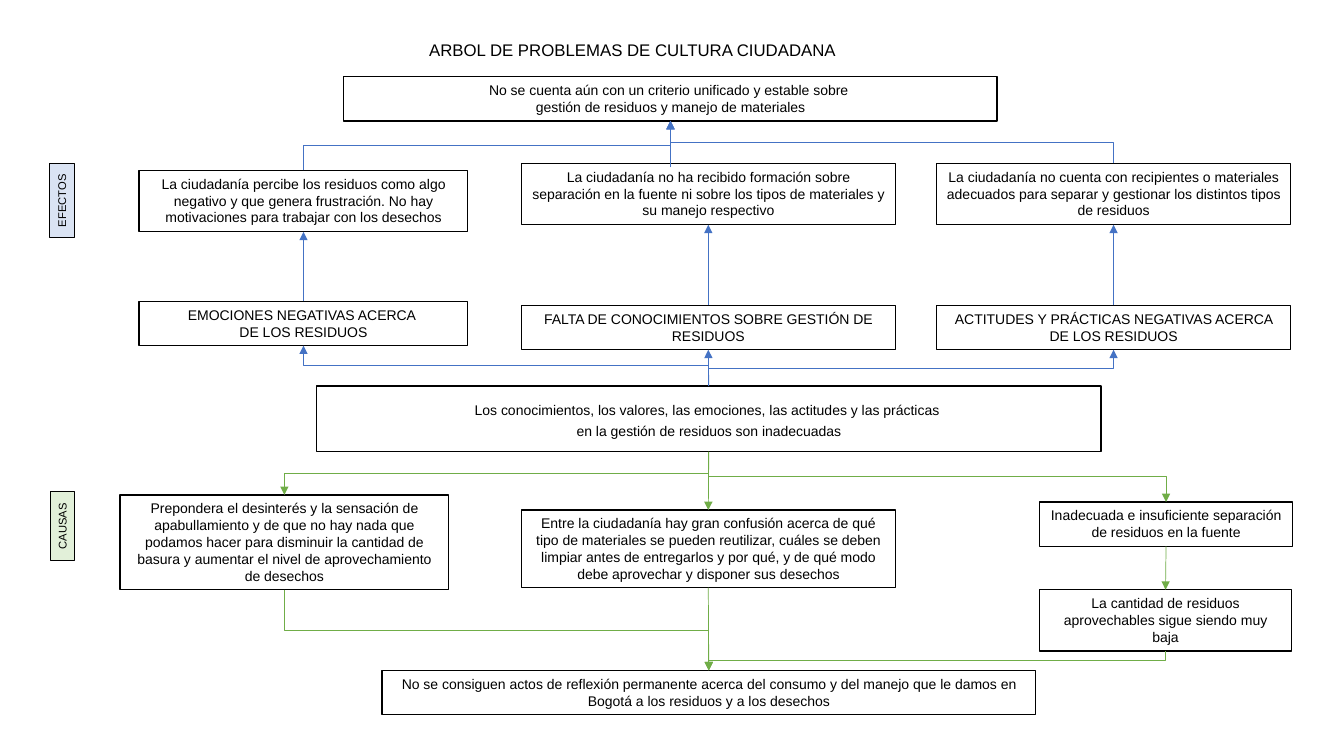
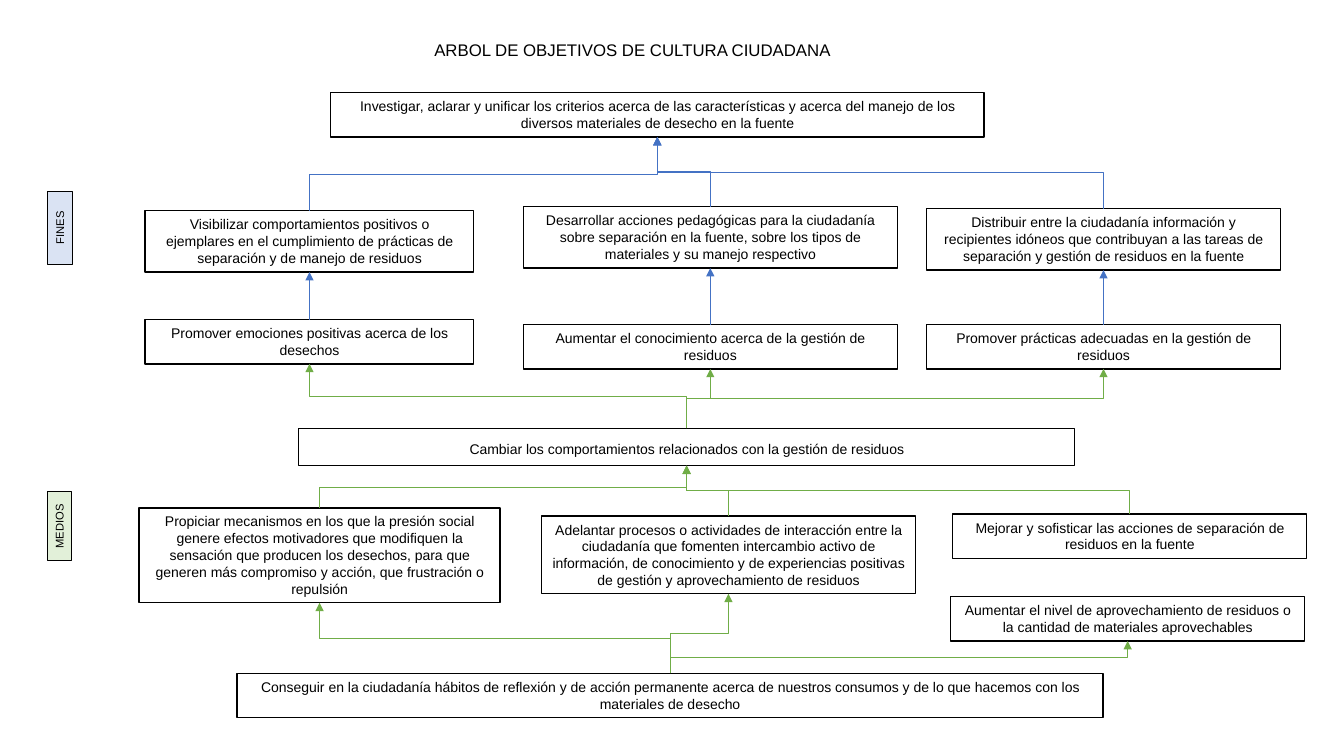
from itertools import product

from lxml import etree
from pptx import Presentation
from pptx.dml.color import RGBColor
from pptx.enum.dml import MSO_LINE
from pptx.enum.shapes import MSO_CONNECTOR
from pptx.enum.text import MSO_ANCHOR, MSO_AUTO_SIZE, PP_ALIGN
from pptx.oxml.ns import qn
from pptx.util import Inches, Pt

COLORS = {
    "text": "000000", "paper": "FFFFFF", "border": "000000",
    "blue": "4472C4", "green": "70AD47",
    "pale_blue": "DAE3F3", "pale_green": "E2F0D9",
}
FONT = "Arial"
HEADING_AT = (1.59, 0.35, 9.37, 0.3)
LABEL_H = 0.24
BOX_H = {1: 0.44, 2: 0.61, 3: 0.77, 4: 0.94}
TOP, BOTTOM = 0, 2

TREES = [
    {
        "heading": "ARBOL DE PROBLEMAS DE CULTURA CIUDADANA",
        "core": ((3.14, 3.83, 7.78, 0.65),
                 "Los conocimientos, los valores, las emociones, las actitudes y las prácticas \n"
                 "en la gestión de residuos son inadecuadas"),
        "boxes": {
            "knowledge": ((5.17, 3.03, 3.71, BOX_H[1]),
                          "FALTA DE CONOCIMIENTOS SOBRE GESTIÓN DE RESIDUOS"),
            "practices": ((9.29, 3.03, 3.51, BOX_H[1]),
                          "ACTITUDES Y PRÁCTICAS NEGATIVAS ACERCA DE LOS RESIDUOS"),
            "emotions": ((1.38, 2.99, 3.26, BOX_H[1]),
                         "EMOCIONES NEGATIVAS ACERCA \nDE LOS RESIDUOS"),
            "training": ((5.17, 1.62, 3.71, BOX_H[2]),
                         "La ciudadanía no ha recibido formación sobre separación en la fuente "
                         "ni sobre los tipos de materiales y su manejo respectivo"),
            "criteria": ((3.41, 0.76, 6.48, BOX_H[1]),
                         "No se cuenta aún con un criterio unificado y estable sobre \n"
                         "gestión de residuos y manejo de materiales"),
            "containers": ((9.29, 1.62, 3.51, BOX_H[2]),
                           "La ciudadanía no cuenta con recipientes o materiales adecuados "
                           "para separar y gestionar los distintos tipos de residuos"),
            "perception": ((1.38, 1.69, 3.26, BOX_H[2]),
                           "La ciudadanía percibe los residuos como algo negativo y que genera "
                           "frustración. No hay motivaciones para trabajar con los desechos"),
            "confusion": ((5.17, 5.06, 3.71, BOX_H[3]),
                          "Entre la ciudadanía hay gran confusión acerca de qué tipo de materiales "
                          "se pueden reutilizar, cuáles se deben limpiar antes de entregarlos y por "
                          "qué, y de qué modo debe aprovechar y disponer sus desechos"),
            "separation": ((10.31, 4.98, 2.51, BOX_H[1]),
                           "Inadecuada e insuficiente separación de residuos en la fuente"),
            "apathy": ((1.19, 4.91, 3.26, BOX_H[4]),
                       "Prepondera el desinterés y la sensación de apabullamiento y de que no hay "
                       "nada que podamos hacer para disminuir la cantidad de basura y aumentar el "
                       "nivel de aprovechamiento de desechos"),
            "reflection": ((3.79, 6.65, 6.48, BOX_H[1]),
                           "No se consiguen actos de reflexión permanente acerca del consumo y del "
                           "manejo que le damos en Bogotá a los residuos y a los desechos"),
            "recovery": ((10.31, 5.85, 2.5, BOX_H[2]),
                         "La cantidad de residuos aprovechables sigue siendo muy baja"),
        },
        "links": [
            ("blue", ["knowledge"], ["training"]),
            ("blue", ["core"], ["emotions", "practices", "knowledge"]),
            ("blue", ["emotions"], ["perception"]),
            ("blue", ["practices"], ["containers"]),
            ("blue", ["perception", "containers"], ["criteria"]),
            ("green", ["core"], ["apathy", "separation", "confusion"]),
            ("green", ["separation"], ["recovery"]),
            ("green", ["apathy", "recovery", "confusion"], ["reflection"]),
        ],
        "stems": [("blue", 1.66, "criteria")],
        "labels": [("CAUSAS", "pale_green", 0.28, 5.1, 0.68),
                   ("EFECTOS", "pale_blue", 0.25, 1.87, 0.73)],
    },
    {
        "heading": "ARBOL DE OBJETIVOS DE CULTURA CIUDADANA",
        "core": ((2.96, 4.25, 7.7, 0.37),
                 "Cambiar los comportamientos relacionados con la gestión de residuos"),
        "boxes": {
            "knowledge": ((5.19, 3.22, 3.71, BOX_H[1]),
                          "Aumentar el conocimiento acerca de la gestión de residuos"),
            "practices": ((9.19, 3.22, 3.51, BOX_H[1]),
                          "Promover prácticas adecuadas en la gestión de residuos"),
            "emotions": ((1.44, 3.17, 3.26, BOX_H[1]),
                         "Promover emociones positivas acerca de los desechos"),
            "training": ((5.19, 2.05, 3.71, BOX_H[2]),
                         "Desarrollar acciones pedagógicas para la ciudadanía sobre separación en "
                         "la fuente, sobre los tipos de materiales y su manejo respectivo"),
            "criteria": ((3.28, 0.92, 6.48, BOX_H[1]),
                         "Investigar, aclarar y unificar los criterios acerca de las características "
                         "y acerca del manejo de los diversos materiales de desecho en la fuente"),
            "containers": ((9.19, 2.07, 3.51, BOX_H[2]),
                           "Distribuir entre la ciudadanía información y recipientes idóneos que "
                           "contribuyan a las tareas de separación y gestión de residuos en la fuente"),
            "behaviour": ((1.44, 2.09, 3.26, BOX_H[2]),
                          "Visibilizar comportamientos positivos o ejemplares en el cumplimiento de "
                          "prácticas de separación y de manejo de residuos"),
            "exchange": ((5.37, 5.12, 3.71, BOX_H[3]),
                         "Adelantar procesos o actividades de interacción entre la ciudadanía que "
                         "fomenten intercambio activo de información, de conocimiento y de "
                         "experiencias positivas de gestión y aprovechamiento de residuos"),
            "separation": ((9.45, 5.1, 3.51, BOX_H[1]),
                           "Mejorar y sofisticar las acciones de separación de residuos en la fuente"),
            "motivation": ((1.38, 5.04, 3.58, BOX_H[4]),
                           "Propiciar mecanismos en los que la presión social genere efectos "
                           "motivadores que modifiquen la sensación que producen los desechos, para "
                           "que generen más compromiso y acción, que frustración o repulsión"),
            "habits": ((2.35, 6.68, 8.59, BOX_H[1]),
                       "Conseguir en la ciudadanía hábitos de reflexión y de acción permanente "
                       "acerca de nuestros consumos y de lo que hacemos con los materiales de desecho"),
            "recovery": ((9.43, 5.92, 3.51, BOX_H[1]),
                         "Aumentar el nivel de aprovechamiento de residuos o la cantidad de "
                         "materiales aprovechables"),
        },
        "links": [
            ("blue", ["training", "behaviour", "containers"], ["criteria"]),
            ("blue", ["emotions"], ["behaviour"]),
            ("blue", ["knowledge"], ["training"]),
            ("blue", ["practices"], ["containers"]),
            ("green", ["core"], ["emotions", "practices", "knowledge"]),
            ("green", ["exchange", "motivation", "separation"], ["core"]),
            ("green", ["habits"], ["motivation", "exchange", "recovery"]),
        ],
        "stems": [],
        "labels": [("MEDIOS", "pale_green", 0.25, 5.1, 0.68),
                   ("FINES", "pale_blue", 0.23, 2.14, 0.73)],
    },
]


def rgb(name):
    return RGBColor.from_string(COLORS[name])


def place(shape, at):
    for name, value in zip(("left", "top", "width", "height"), at):
        setattr(shape, name, Inches(value))


def write(shape, text, size, spacing=1.0, anchor=MSO_ANCHOR.TOP,
          auto_size=MSO_AUTO_SIZE.SHAPE_TO_FIT_TEXT):
    tf = shape.text_frame
    frame = {"word_wrap": True, "auto_size": auto_size, "vertical_anchor": anchor,
             "margin_left": Inches(0.1), "margin_right": Inches(0.1),
             "margin_top": Inches(0.05), "margin_bottom": Inches(0.05)}
    for name, value in frame.items():
        setattr(tf, name, value)
    p = tf.paragraphs[0]
    p.alignment, p.line_spacing, p.space_before = PP_ALIGN.CENTER, spacing, Pt(0)
    for i, line in enumerate(text.split("\n")):
        if i:
            p.add_line_break()
        r = p.add_run()
        r.text = line
        r.font.name, r.font.size = FONT, Pt(size)
        r.font.color.rgb = rgb("text")


def frame_box(shape, fill="paper", width=1):
    shape.fill.solid()
    shape.fill.fore_color.rgb = rgb(fill)
    shape.line.color.rgb = rgb("border")
    shape.line.width = Pt(width)


def add_text(s, at, text, size):
    sp = s.shapes.add_textbox(*map(Inches, at))
    write(sp, text, size)
    return sp


def add_arrow(s, kind, color, x1, y1, x2, y2):
    c = s.shapes.add_connector(kind, x1, y1, x2, y2)
    c.line.color.rgb = rgb(color)
    c.line.width = Pt(0.5)
    c.line.dash_style = MSO_LINE.SOLID
    etree.SubElement(c.line._get_or_add_ln(), qn("a:tailEnd"), type="triangle")
    etree.SubElement(c._element.spPr, qn("a:effectLst"))
    return c


def turn_elbow(c, x1, y1, x2, y2):
    w, h = abs(y2 - y1), abs(x2 - x1)
    c.left, c.top = (x1 + x2 - w) // 2, (y1 + y2 - h) // 2
    c.width, c.height = w, h
    down, right = y2 > y1, x2 > x1
    xfrm = c._element.spPr.find(qn("a:xfrm"))
    xfrm.flipH, xfrm.flipV = False, down == right
    xfrm.rot = 90 if down else 270


def side_middle(shape, side):
    return shape.left + shape.width // 2, shape.top + (shape.height if side == BOTTOM else 0)


def link(s, color, a, b):
    begin, end = (BOTTOM, TOP) if b.top > a.top else (TOP, BOTTOM)
    ends = *side_middle(a, begin), *side_middle(b, end)
    straight = abs(ends[2] - ends[0]) < Inches(0.05)
    kind = MSO_CONNECTOR.STRAIGHT if straight else MSO_CONNECTOR.ELBOW
    c = add_arrow(s, kind, color, *ends)
    c.begin_connect(a, begin)
    c.end_connect(b, end)
    if not straight:
        turn_elbow(c, *ends)


def build(prs, tree):
    s = prs.slides.add_slide(prs.slide_layouts[5])
    at, text = tree["core"]
    core = s.shapes.title
    place(core, at)
    write(core, text, 10, 1.2, MSO_ANCHOR.MIDDLE, MSO_AUTO_SIZE.NONE)
    frame_box(core)
    nodes = {"core": core}
    for name, (at, text) in tree["boxes"].items():
        nodes[name] = add_text(s, at, text, 10)
        frame_box(nodes[name])
    add_text(s, HEADING_AT, tree["heading"], 12)
    for color, sources, targets in tree["links"]:
        for a, b in product(sources, targets):
            link(s, color, nodes[a], nodes[b])
    for color, y, name in tree["stems"]:
        x, end_y = side_middle(nodes[name], BOTTOM)
        c = add_arrow(s, MSO_CONNECTOR.STRAIGHT, color, x, Inches(y), x, end_y)
        c.end_connect(nodes[name], BOTTOM)
    for text, fill, x, y, width in tree["labels"]:
        label = add_text(s, (x, y, width, LABEL_H), text, 8)
        label.rotation = 270
        frame_box(label, fill, 0.75)


def main():
    prs = Presentation()
    prs.slide_width, prs.slide_height = Inches(13.33), Inches(7.5)
    for tree in TREES:
        build(prs, tree)
    prs.save("out.pptx")


if __name__ == "__main__":
    main()
